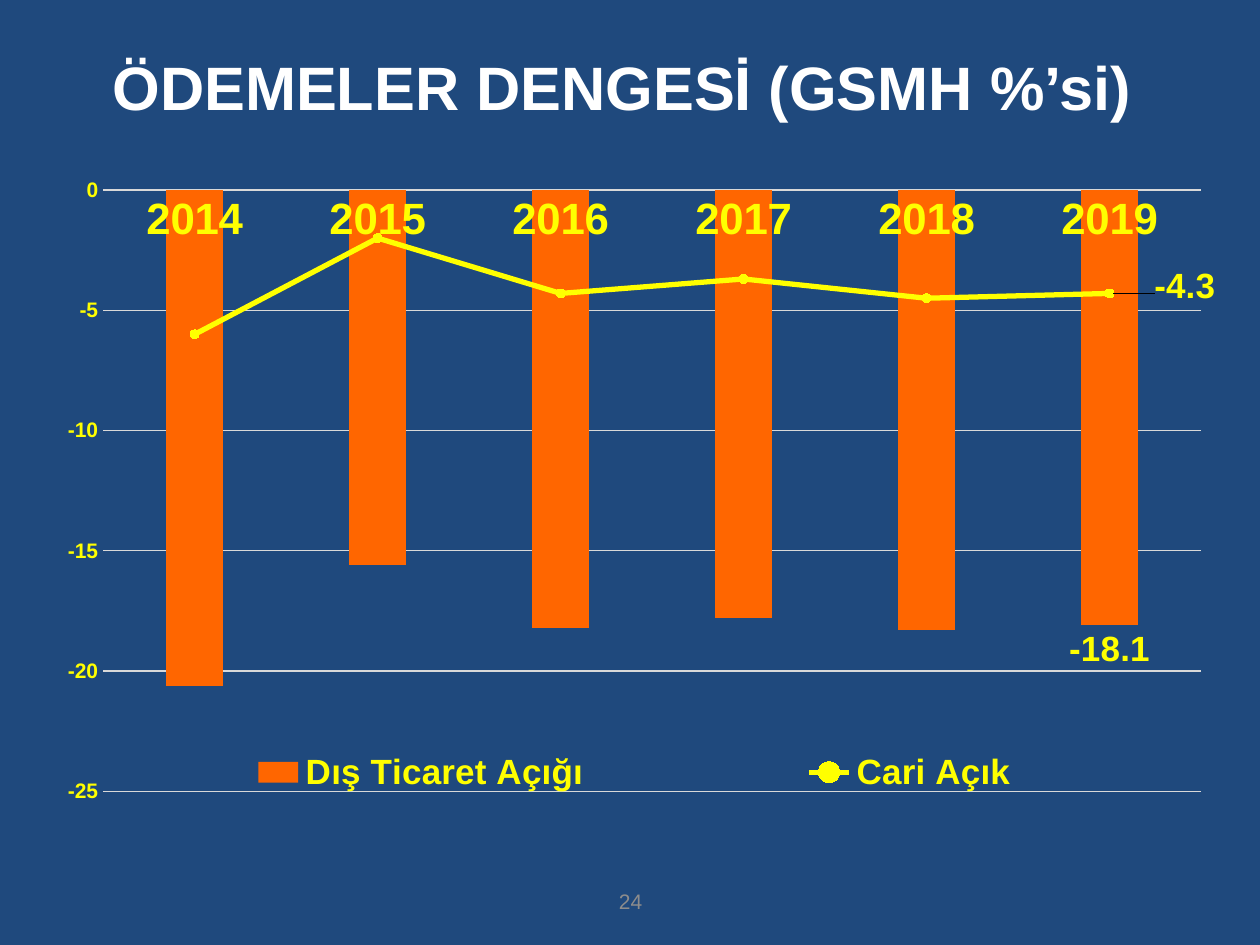
"""Build the balance of payments slide with its column and line chart."""
import pptx
import pptx.chart.data
import pptx.dml.color
import pptx.enum.chart
import pptx.enum.text
import pptx.oxml
import pptx.oxml.ns
import pptx.util

Inches, Pt = pptx.util.Inches, pptx.util.Pt
YELLOW, ORANGE, GREY = "FFFF00", "FF6600", "D9D9D9"


def color(value):
    return pptx.dml.color.RGBColor.from_string(value)


def layout_xml(**settings):
    tags = "".join(f'<c:{tag} val="{value}"/>' for tag, value in settings.items())
    return pptx.oxml.parse_xml(
        f'<c:layout {pptx.oxml.ns.nsdecls("c")}><c:manualLayout>{tags}</c:manualLayout></c:layout>')


deck = pptx.Presentation()
deck.slide_width, deck.slide_height = Inches(10), Inches(7.5)
slide = deck.slides.add_slide(deck.slide_layouts[5])
slide.background.fill.solid()
slide.background.fill.fore_color.rgb = color("1F497D")

page_number = slide.shapes.add_textbox(Inches(3.42), Inches(6.95), Inches(3.17), Inches(0.4))
heading = slide.shapes.title
heading.left, heading.top, heading.width, heading.height = (
    Inches(0), Inches(0.13), Inches(9.88), Inches(1.1))
for box, wording, size, tint, bold in (
        (page_number, "24", 12, "8C8C8C", False),
        (heading, "ÖDEMELER DENGESİ (GSMH %’si)", 35, "FFFFFF", True)):
    frame = box.text_frame
    frame.text = wording
    frame.word_wrap = True
    frame.vertical_anchor = pptx.enum.text.MSO_ANCHOR.MIDDLE
    paragraph = frame.paragraphs[0]
    paragraph.alignment = pptx.enum.text.PP_ALIGN.CENTER
    paragraph.font.name, paragraph.font.size, paragraph.font.bold = "Arial", Pt(size), bold
    paragraph.font.color.rgb = color(tint)

balances = pptx.chart.data.CategoryChartData()
balances.categories = [str(year) for year in range(2014, 2020)]
balances.add_series("Dış Ticaret Açığı", (-20.6, -15.6, -18.2, -17.8, -18.3, -18.1))
balances.add_series("Cari Açık", (-6, -2, -4.3, -3.7, -4.5, -4.3))
chart = slide.shapes.add_chart(
    pptx.enum.chart.XL_CHART_TYPE.COLUMN_CLUSTERED,
    Inches(0.35), Inches(1.31), Inches(9.37), Inches(5.67), balances).chart
chart.has_title = False
chart.font.name, chart.font.size = "Arial", Pt(10)

bar_group = chart.element.xpath(".//c:barChart")[0]
line_group = pptx.oxml.parse_xml(
    f'<c:lineChart {pptx.oxml.ns.nsdecls("c")}><c:grouping val="standard"/><c:varyColors val="0"/>'
    '<c:marker val="1"/></c:lineChart>')
line_series = bar_group.xpath("c:ser")[1]
for bar_setting in line_series.xpath("c:invertIfNegative"):
    line_series.remove(bar_setting)
line_group.insert(2, line_series)
for axis_id in bar_group.xpath("c:axId"):
    line_group.append(pptx.oxml.parse_xml(
        f'<c:axId {pptx.oxml.ns.nsdecls("c")} val="{axis_id.get("val")}"/>'))
bar_group.addnext(line_group)

columns, lines = chart.plots
columns.gap_width = 219
columns.vary_by_categories = False
trade_deficit, current_deficit = columns.series[0], lines.series[0]
trade_deficit.invert_if_negative = False
trade_deficit.format.fill.solid()
trade_deficit.format.fill.fore_color.rgb = color(ORANGE)
current_deficit.smooth = False
current_deficit.format.line.color.rgb = color(YELLOW)
current_deficit.format.line.width = Pt(3)
current_deficit.marker.style = pptx.enum.chart.XL_MARKER_STYLE.CIRCLE
current_deficit.marker.size = 5
current_deficit.marker.format.fill.solid()
current_deficit.marker.format.fill.fore_color.rgb = color(YELLOW)
current_deficit.marker.format.line.color.rgb = color(YELLOW)

years, shares = chart.category_axis, chart.value_axis
shares.minimum_scale, shares.maximum_scale, shares.major_unit = -25, 0, 5
shares.tick_labels.number_format = "0"
shares.tick_labels.number_format_is_linked = False
shares.major_gridlines.format.line.color.rgb = color(GREY)
shares.major_gridlines.format.line.width = Pt(0.75)
shares.format.line.fill.background()
years.format.line.color.rgb = color(GREY)
years.format.line.width = Pt(0.75)
for axis in (years, shares):
    axis.major_tick_mark = axis.minor_tick_mark = pptx.enum.chart.XL_TICK_MARK.NONE

chart.has_legend = True
legend = chart.legend
legend.position = pptx.enum.chart.XL_LEGEND_POSITION.BOTTOM
legend.include_in_layout = False

fonts = [(years.tick_labels.font, 25), (shares.tick_labels.font, 12), (legend.font, 20)]
label_position = pptx.enum.chart.XL_LABEL_POSITION
for series, position in ((trade_deficit, label_position.OUTSIDE_END),
                         (current_deficit, label_position.RIGHT)):
    series.data_labels.show_value = False
    label = series.points[5].data_label
    fonts.append((label.font, 20))
    label.position = position
for font, size in fonts:
    font.name, font.size, font.bold = "Arial", Pt(size), True
    font.color.rgb = color(YELLOW)

plot_area = chart.element.xpath(".//c:plotArea")[0]
legend_area = chart.element.xpath(".//c:legend")[0]
for area in (plot_area, legend_area):
    for automatic in area.xpath("c:layout"):
        area.remove(automatic)
plot_area.insert(0, layout_xml(
    layoutTarget="inner", xMode="edge", yMode="edge", x=0.05, y=0.035, w=0.93, h=0.842))
legend_area.xpath("c:legendPos")[0].addnext(layout_xml(
    xMode="edge", yMode="edge", x=0, y=0.8, w=1, h=0.1))
line_series.xpath(".//c:dLbl/c:idx")[0].addnext(layout_xml(x=0.03, y=-0.01))

deck.save("out.pptx")
